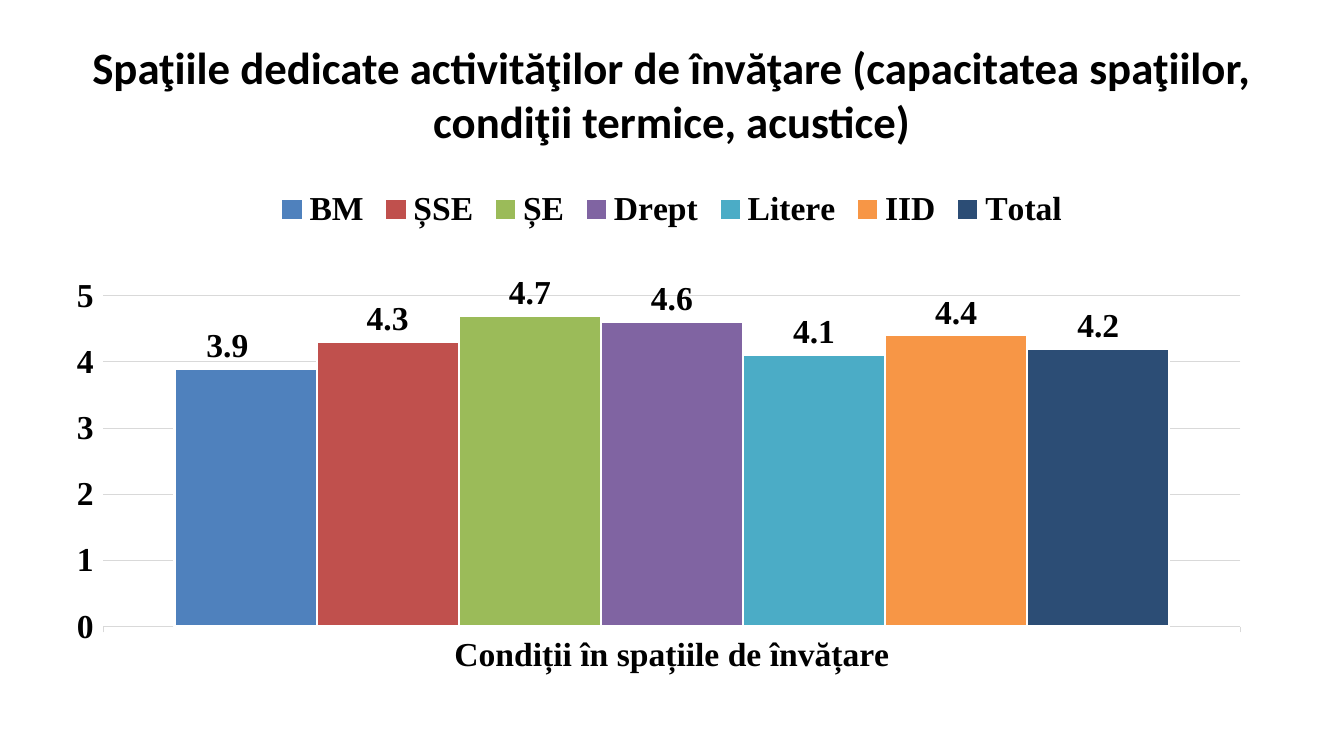
from dataclasses import dataclass

from lxml import etree
from pptx import Presentation
from pptx.chart.data import CategoryChartData
from pptx.dml.color import RGBColor
from pptx.enum.chart import XL_CHART_TYPE, XL_LABEL_POSITION, XL_LEGEND_POSITION, XL_TICK_MARK
from pptx.enum.text import MSO_ANCHOR, PP_ALIGN
from pptx.oxml.ns import qn
from pptx.util import Inches, Pt

COLUMNS = XL_CHART_TYPE.COLUMN_CLUSTERED
OUTSIDE_END = XL_LABEL_POSITION.OUTSIDE_END
LEGEND_TOP = XL_LEGEND_POSITION.TOP
TICK_OUT = XL_TICK_MARK.OUTSIDE
TICK_NONE = XL_TICK_MARK.NONE
MIDDLE = MSO_ANCHOR.MIDDLE
CENTER = PP_ALIGN.CENTER

SLIDE_WIDTH, SLIDE_HEIGHT = Inches(13.33), Inches(7.5)
COLORS = {
    "text": "000000", "grid": "D9D9D9", "edge": "FFFFFF",
    "blue": "4F81BD", "red": "C0504D", "green": "9BBB59", "purple": "8064A2",
    "teal": "4BACC6", "orange": "F79646", "navy": "2C4D75",
}
TITLE = "Spaţiile dedicate activităţilor de învăţare (capacitatea spaţiilor, condiţii termice, acustice)"
CATEGORY = "Condiții în spațiile de învățare"


@dataclass(frozen=True)
class Area:
    left: float
    top: float
    width: float
    height: float

    def place(self) -> tuple[int, int, int, int]:
        return (int(self.left * SLIDE_WIDTH), int(self.top * SLIDE_HEIGHT),
                int(self.width * SLIDE_WIDTH), int(self.height * SLIDE_HEIGHT))


@dataclass(frozen=True)
class Faculty:
    name: str
    score: float
    color: str
    label_shift: float = 0


TITLE_AREA = Area(0.05, 0.04, 0.9, 1 / 6)
CHART_AREA = Area(0.05, 0.7 / 3, 0.9, 0.66)
PLOT_SHARES = {"x": 0.03, "y": 0.24, "w": 0.94, "h": 0.665}
FACULTIES = [
    Faculty("BM", 3.9, "blue", -0.015),
    Faculty("ȘSE", 4.3, "red"),
    Faculty("ȘE", 4.7, "green"),
    Faculty("Drept", 4.6, "purple"),
    Faculty("Litere", 4.1, "teal"),
    Faculty("IID", 4.4, "orange"),
    Faculty("Total", 4.2, "navy"),
]


def color(name: str) -> RGBColor:
    return RGBColor.from_string(COLORS[name])


def style_font(font, name: str, size: int) -> None:
    font.name = name
    font.size = Pt(size)
    font.bold = True
    font.color.rgb = color("text")


def style_chart_font(font) -> None:
    style_font(font, "Times New Roman", 24)


def style_line(line, name: str, width: float) -> None:
    line.color.rgb = color(name)
    line.width = Pt(width)


def make_layout(settings: dict) -> etree._Element:
    layout = etree.Element(qn("c:layout"))
    manual = etree.SubElement(layout, qn("c:manualLayout"))
    for tag, value in settings.items():
        etree.SubElement(manual, qn(f"c:{tag}")).set("val", str(value))
    return layout


def add_title(slide) -> None:
    shape = slide.shapes.add_textbox(*TITLE_AREA.place())
    text_frame = shape.text_frame
    text_frame.word_wrap = True
    text_frame.vertical_anchor = MIDDLE
    text_frame.text = TITLE
    paragraph = text_frame.paragraphs[0]
    paragraph.alignment = CENTER
    style_font(paragraph.runs[0].font, "Calibri", 32)


def style_series(series, faculty: Faculty) -> None:
    series.format.fill.solid()
    series.format.fill.fore_color.rgb = color(faculty.color)
    style_line(series.format.line, "edge", 1.5)
    labels = series.data_labels
    labels.show_value = True
    labels.position = OUTSIDE_END
    style_chart_font(labels.font)
    if faculty.label_shift:
        label = series.points[0].data_label
        label.position = OUTSIDE_END
        style_chart_font(label.font)
        index = series.data_labels._element.find(f"{qn('c:dLbl')}/{qn('c:idx')}")
        index.addnext(make_layout({"x": faculty.label_shift, "y": 0}))


def style_axes(chart) -> None:
    category_axis, value_axis = chart.category_axis, chart.value_axis
    for axis in (category_axis, value_axis):
        axis.major_tick_mark = TICK_OUT
        axis.minor_tick_mark = TICK_NONE
        style_chart_font(axis.tick_labels.font)
    style_line(category_axis.format.line, "grid", 0.75)
    value_axis.minimum_scale = 0
    value_axis.maximum_scale = 5
    value_axis.major_unit = 1
    value_axis.format.line.fill.background()
    style_line(value_axis.major_gridlines.format.line, "grid", 0.75)


def add_score_chart(slide) -> None:
    chart_data = CategoryChartData()
    chart_data.categories = [CATEGORY]
    for faculty in FACULTIES:
        chart_data.add_series(faculty.name, [faculty.score])
    chart = slide.shapes.add_chart(COLUMNS, *CHART_AREA.place(), chart_data).chart
    chart.has_title = False
    style_chart_font(chart.font)
    chart.has_legend = True
    chart.legend.position = LEGEND_TOP
    chart.legend.include_in_layout = False
    style_chart_font(chart.legend.font)
    style_axes(chart)

    plot = chart.plots[0]
    plot.gap_width = 100
    plot.overlap = 0
    plot.vary_by_categories = False
    for series, faculty in zip(plot.series, FACULTIES):
        style_series(series, faculty)

    plot_area = chart._chartSpace.chart.plotArea
    for layout in plot_area.findall(qn("c:layout")):
        plot_area.remove(layout)
    modes = {"layoutTarget": "inner", "xMode": "edge", "yMode": "edge"}
    plot_area.insert(0, make_layout(modes | PLOT_SHARES))


def main() -> None:
    presentation = Presentation()
    presentation.slide_width = SLIDE_WIDTH
    presentation.slide_height = SLIDE_HEIGHT
    slide = presentation.slides.add_slide(presentation.slide_layouts[6])
    add_title(slide)
    add_score_chart(slide)
    presentation.save("out.pptx")


if __name__ == "__main__":
    main()
